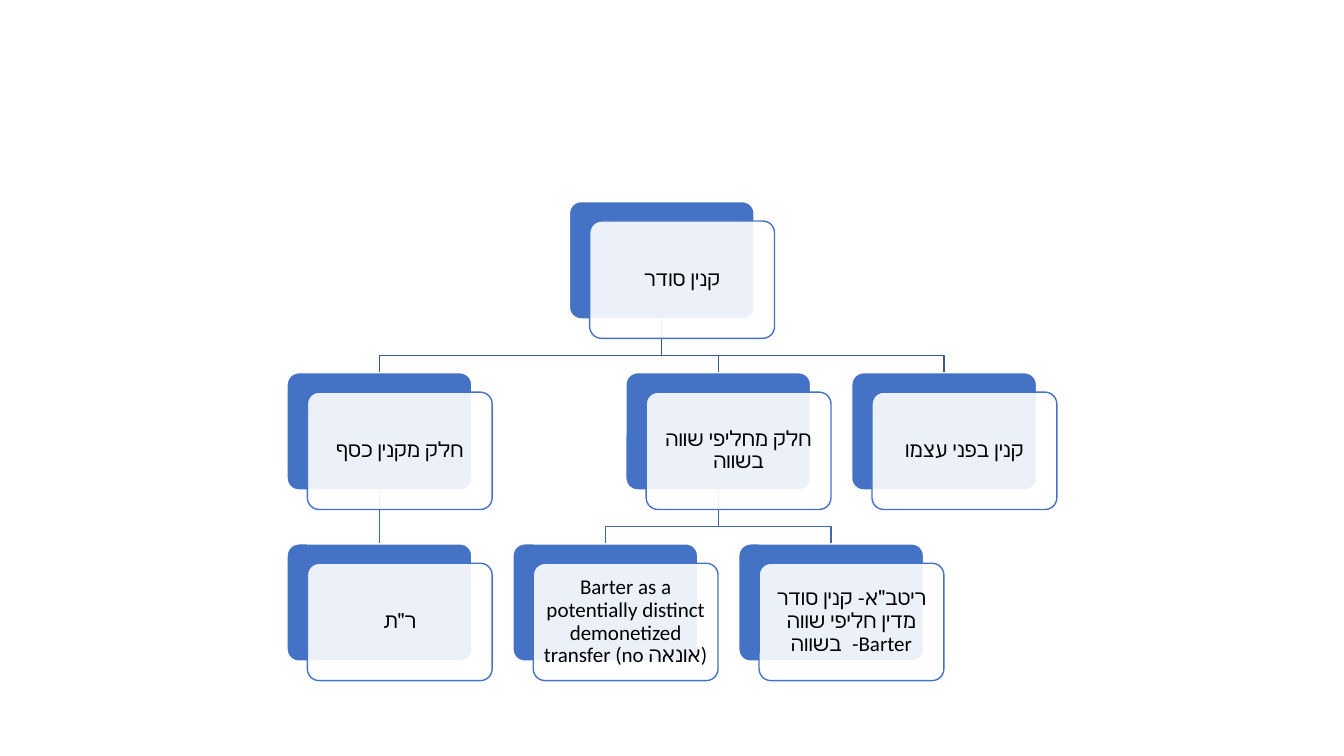
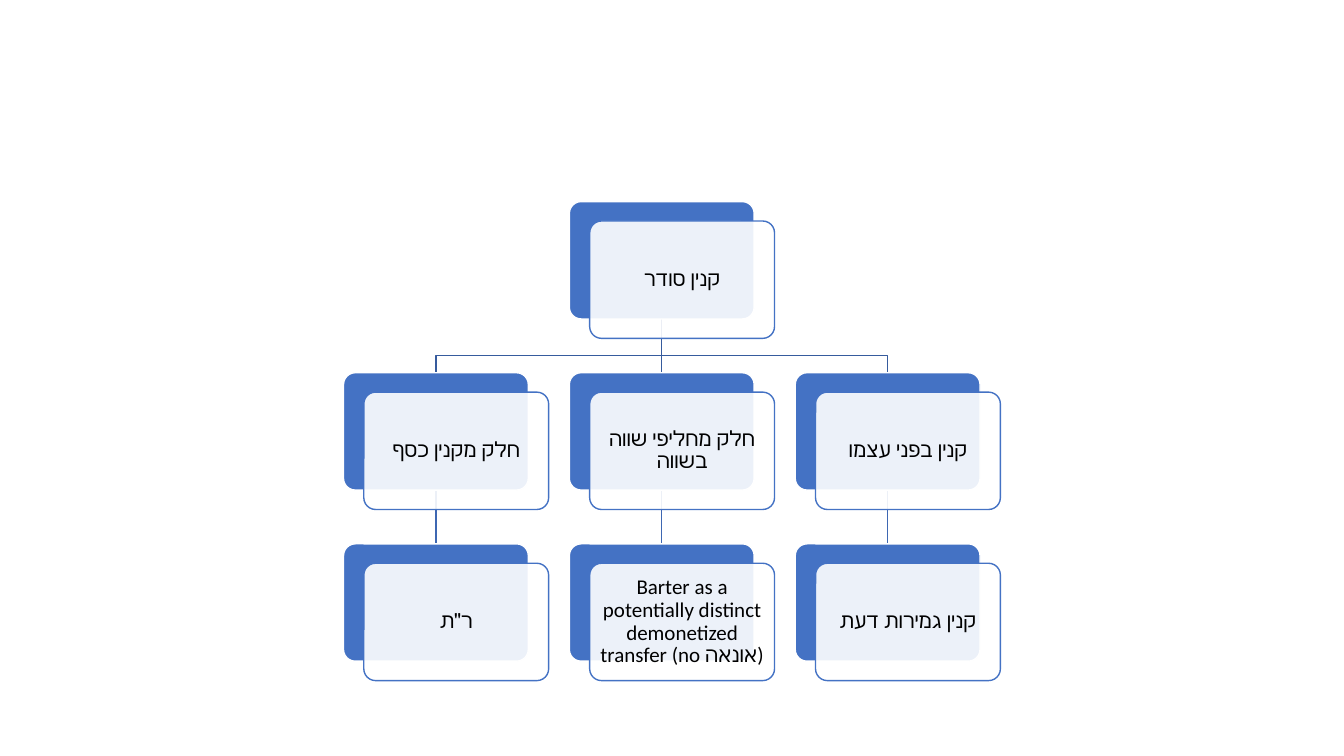
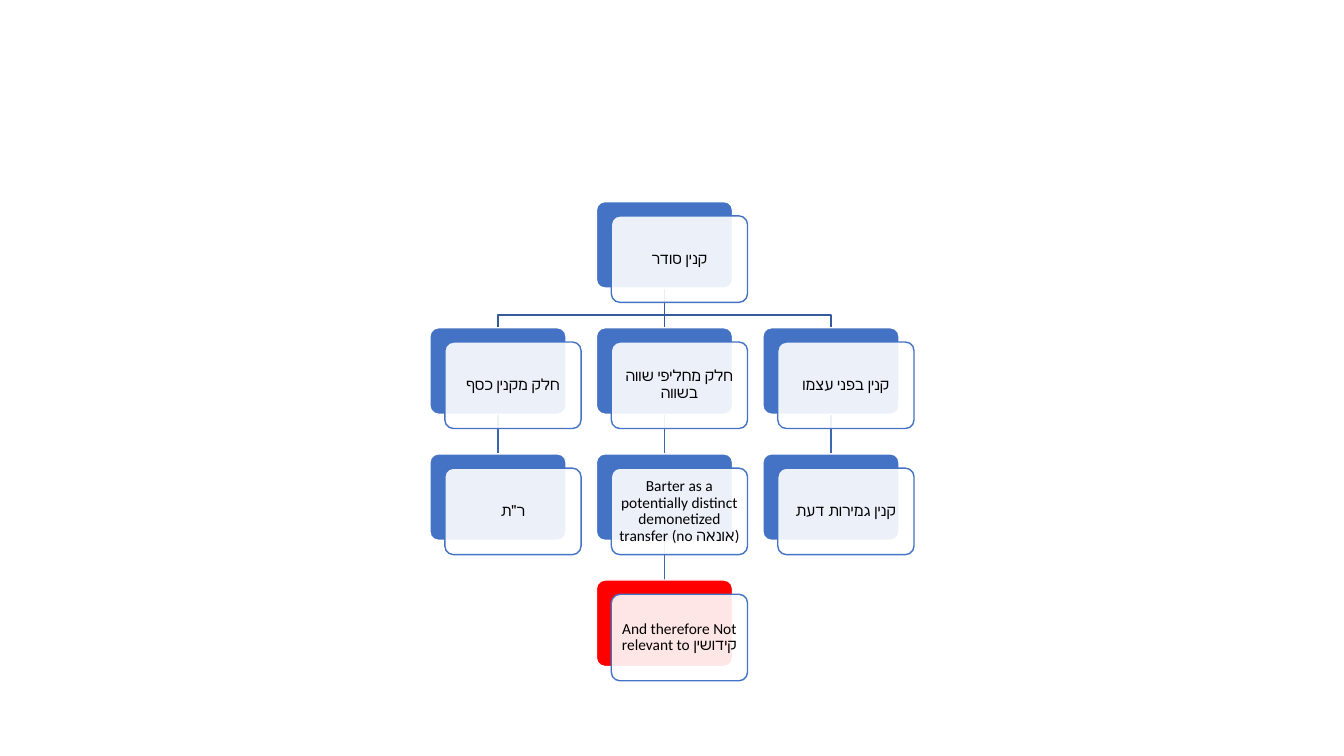
from dataclasses import dataclass

from lxml.etree import SubElement
from pptx import Presentation
from pptx.dml.color import RGBColor
from pptx.enum.shapes import MSO_CONNECTOR, MSO_SHAPE
from pptx.enum.text import MSO_ANCHOR, PP_ALIGN
from pptx.oxml.ns import qn
from pptx.util import Pt

COLORS = {"card": "4472C4", "alert": "FF0000", "panel": "FFFFFF", "text": "000000",
          "root_link": "365B9D", "link": "3E67B2"}
FONT = "Calibri"
TOP = 144

# Proportions of the tree, as shares of the card width
CARD_HEIGHT = 0.635
COLUMN_STEP = 11 / 9
LEVEL_STEP = 0.926
PANEL_SHIFT_X = 0.11
PANEL_SHIFT_Y = 0.105
KNEE = 0.68  # share of the gap between levels


@dataclass
class Node:
    """A card; column counts steps from the middle of the tree."""
    text: str
    column: float = 0
    children: tuple = ()
    color: str = "card"


@dataclass
class Grid:
    middle: float
    card_width: float
    font_size: float

    @property
    def card_height(self):
        return self.card_width * CARD_HEIGHT

    def center(self, node):
        return self.middle + node.column * self.card_width * COLUMN_STEP

    def top(self, level):
        return TOP + level * self.card_width * LEVEL_STEP


def rgb(name):
    return RGBColor.from_string(COLORS[name])


def style_line(shape, color):
    shape.line.color.rgb = rgb(color)
    shape.line.width = Pt(1)


def add_link(page, start, end, color):
    """Join two points, with a knee if they are not in one column."""
    (x1, y1), (x2, y2) = start, end
    if x1 == x2:
        link = page.shapes.add_connector(
            MSO_CONNECTOR.STRAIGHT, Pt(x1), Pt(y1), Pt(x2), Pt(y2))
        SubElement(link._element.spPr, qn("a:effectLst"))
    else:
        knee = y1 + (y2 - y1) * KNEE
        outline = page.shapes.build_freeform(Pt(x1), Pt(y1))
        outline.add_line_segments(
            [(Pt(x), Pt(y)) for x, y in ((x1, knee), (x2, knee), end)], close=False)
        link = outline.convert_to_shape()
        link.fill.background()
        link.shadow.inherit = False
    style_line(link, color)


def add_links(page, grid, node, level=0):
    bottom = grid.top(level) + grid.card_height
    for child in node.children:
        add_link(page, (grid.center(node), bottom),
                 (grid.center(child), grid.top(level + 1)),
                 "link" if level else "root_link")
        add_links(page, grid, child, level + 1)


def add_round_box(page, grid, left, top, fill, line):
    box = page.shapes.add_shape(MSO_SHAPE.ROUNDED_RECTANGLE, Pt(left), Pt(top),
                                Pt(grid.card_width), Pt(grid.card_height))
    box.adjustments[0] = 0.1
    box.shadow.inherit = False
    box.fill.solid()
    box.fill.fore_color.rgb = rgb(fill)
    style_line(box, line)
    return box


def write_label(box, text, size):
    frame = box.text_frame
    frame.text = text
    frame.word_wrap = True
    frame.vertical_anchor = MSO_ANCHOR.MIDDLE
    frame.margin_left = frame.margin_right = Pt(size * 0.3)
    frame.margin_top = frame.margin_bottom = Pt(size * 0.3)
    para = frame.paragraphs[0]
    para.alignment = PP_ALIGN.CENTER
    para.line_spacing = 0.9
    para.space_after = Pt(size * 0.35)
    font = para.runs[0].font
    font.name = FONT
    font.size = Pt(size)
    font.color.rgb = rgb("text")


def add_cards(page, grid, node, level=0):
    """Draw a node and all below it: a solid card and a translucent panel with the label."""
    left = grid.center(node) - grid.card_width / 2
    top = grid.top(level)
    add_round_box(page, grid, left, top, node.color, "panel")
    panel = add_round_box(page, grid, left + grid.card_width * PANEL_SHIFT_X,
                          top + grid.card_width * PANEL_SHIFT_Y, "panel", "card")
    fill_color = panel.fill._xPr.find(qn("a:solidFill"))[0]
    SubElement(fill_color, qn("a:alpha"), val="90000")
    write_label(panel, node.text, grid.font_size)
    for child in node.children:
        add_cards(page, grid, child, level + 1)


def add_tree_slide(deck, grid, root):
    page = deck.slides.add_slide(deck.slide_layouts[6])
    add_links(page, grid, root)
    add_cards(page, grid, root)


def kinyan_tree(money, exchange, own, exchange_children, own_children=()):
    """The tree that all slides share; the first three values are columns."""
    return Node("קנין סודר", children=(
        Node("חלק מקנין כסף", money, (Node('ר"ת', money),)),
        Node("חלק מחליפי שווה בשווה", exchange, exchange_children),
        Node("קנין בפני עצמו", own, own_children),
    ))


def barter(column=0, children=()):
    return Node("Barter as a potentially distinct demonetized transfer (no אונאה)",
                column, children)


def main():
    deck = Presentation()
    deck.slide_width, deck.slide_height = Pt(960), Pt(540)
    large = Grid(middle=472.7, card_width=132, font_size=15)
    small = Grid(middle=474.6, card_width=97.3, font_size=11)
    intent = Node("קנין גמירות דעת", 1)
    ritva = Node('ריטב"א- קנין סודר מדין חליפי שווה בשווה  -Barter', 0.75)
    conclusion = Node("And therefore Not relevant to קידושין", color="alert")

    add_tree_slide(deck, large, kinyan_tree(-1.25, 0.25, 1.25, (barter(-0.25), ritva)))
    add_tree_slide(deck, large, kinyan_tree(-1, 0, 1, (barter(),), (intent,)))
    add_tree_slide(deck, small,
                   kinyan_tree(-1, 0, 1, (barter(children=(conclusion,)),), (intent,)))
    deck.save("out.pptx")


if __name__ == "__main__":
    main()
